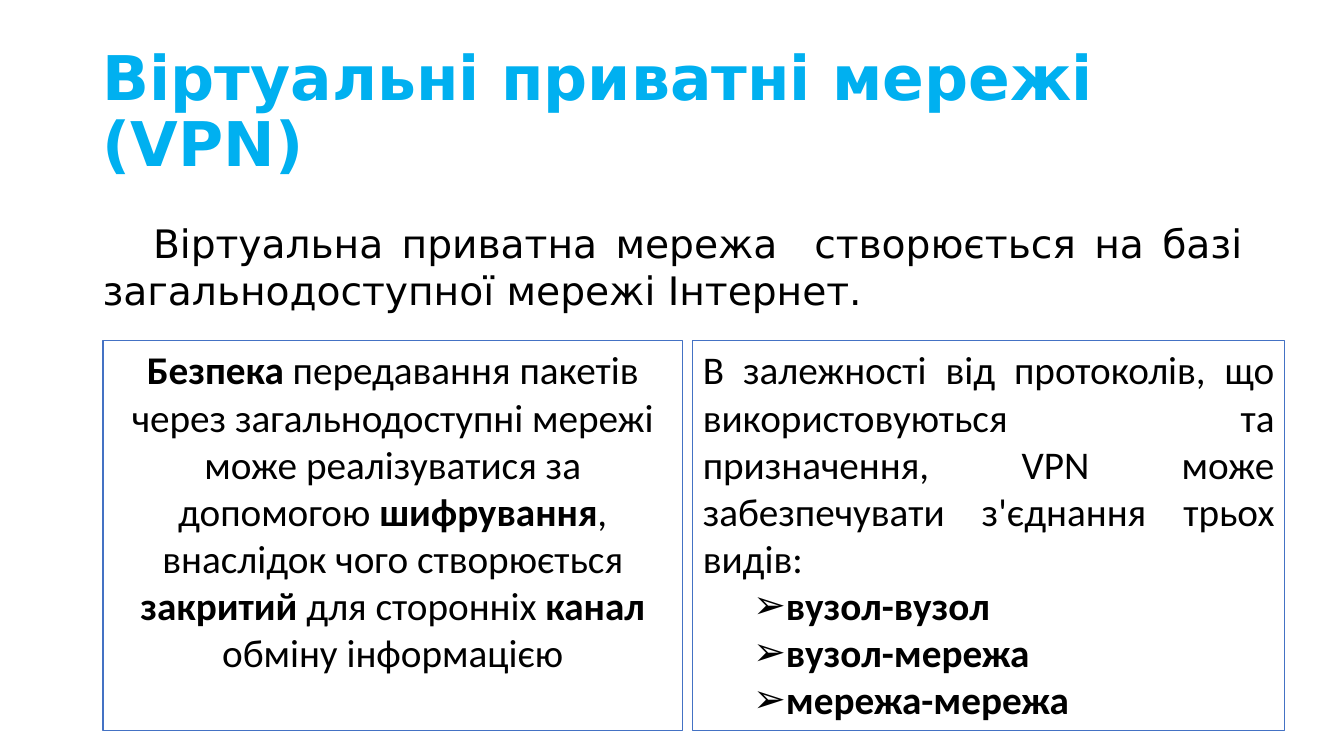
from dataclasses import dataclass, field

from lxml.etree import SubElement
from pptx import Presentation
from pptx.dml.color import RGBColor
from pptx.enum.text import MSO_ANCHOR, MSO_AUTO_SIZE, PP_ALIGN
from pptx.oxml.ns import qn
from pptx.util import Inches, Pt

SLIDE_WIDTH, SLIDE_HEIGHT = Inches(13.33), Inches(7.5)
BLUE, OUTLINE, BLACK, WHITE = "00B0F0", "4472C4", "000000", "FFFFFF"
DISPLAY_FONT, BODY_FONT = "DejaVu Sans", "Calibri"
TWO_CONTENT_LAYOUT = 3


@dataclass
class Area:
    """Place on the slide, in percent of its width and height."""
    left: float
    top: float
    width: float
    height: float


@dataclass
class Para:
    """Text with *bold* parts between asterisks."""
    text: str
    align: PP_ALIGN = PP_ALIGN.LEFT
    level: int = 0
    margin: float = 0
    indent: float = 0
    bullet: str = ""
    spacing: float = 1.0


@dataclass
class Block:
    area: Area
    paras: list[Para]
    font: str = BODY_FONT
    size: int = 28
    color: str = BLACK
    outlined: bool = False
    frame: dict = field(default_factory=dict)


def rgb(value: str) -> RGBColor:
    return RGBColor.from_string(value)


def apply(target, values: dict) -> None:
    for name, value in values.items():
        setattr(target, name, value)


def place(shape, area: Area) -> None:
    apply(shape, {
        "left": int(SLIDE_WIDTH * area.left / 100),
        "top": int(SLIDE_HEIGHT * area.top / 100),
        "width": int(SLIDE_WIDTH * area.width / 100),
        "height": int(SLIDE_HEIGHT * area.height / 100),
    })


def write_para(paragraph, para: Para, block: Block) -> None:
    apply(paragraph, {
        "alignment": para.align, "level": para.level,
        "line_spacing": para.spacing,
        "space_before": Pt(0), "space_after": Pt(0),
    })
    # Indents and bullet
    properties = paragraph._p.get_or_add_pPr()
    properties.set("marL", str(Inches(para.margin)))
    properties.set("indent", str(Inches(para.indent)))
    if para.bullet:
        SubElement(properties, qn("a:buChar"), char=para.bullet)
    else:
        SubElement(properties, qn("a:buNone"))
    # Odd parts lie between asterisks
    for index, part in enumerate(para.text.split("*")):
        if part:
            run = paragraph.add_run()
            run.text = part
            apply(run.font, {"name": block.font, "size": Pt(block.size),
                             "bold": index % 2 == 1})
            run.font.color.rgb = rgb(block.color)


def fill_block(shape, block: Block) -> None:
    place(shape, block.area)
    frame = shape.text_frame
    apply(frame, {"word_wrap": True, "auto_size": MSO_AUTO_SIZE.NONE,
                  "vertical_anchor": MSO_ANCHOR.TOP} | block.frame)
    if block.outlined:
        shape.fill.solid()
        shape.fill.fore_color.rgb = rgb(WHITE)
        shape.line.color.rgb = rgb(OUTLINE)
        shape.line.width = Pt(1)
    for index, para in enumerate(block.paras):
        paragraph = frame.add_paragraph() if index else frame.paragraphs[0]
        write_para(paragraph, para, block)


HEADING = Block(
    Area(6.9, 5.33, 86.27, 19.33),
    [Para("*Віртуальні приватні мережі (VPN)*", spacing=0.9)],
    font=DISPLAY_FONT, size=44, color=BLUE,
    frame={"vertical_anchor": MSO_ANCHOR.MIDDLE},
)
INTRO = Block(
    Area(6.9, 28.4, 86.27, 26.53),
    [Para("Віртуальна приватна мережа  створюється на базі "
          "загальнодоступної мережі Інтернет.",
          PP_ALIGN.JUSTIFY, indent=0.5)],
    font=DISPLAY_FONT,
)
SECURITY = Block(
    Area(7.65, 45.07, 43.14, 51.6),
    [Para("*Безпека *передавання пакетів через загальнодоступні мережі може "
          "реалізуватися за допомогою *шифрування*, внаслідок чого "
          "створюється *закритий* для сторонніх *канал *обміну інформацією",
          PP_ALIGN.CENTER)],
    outlined=True,
)
CONNECTIONS = Block(
    Area(51.54, 45.07, 44.04, 51.6),
    [Para("В залежності від протоколів, що використовуються та призначення, "
          "VPN може забезпечувати з'єднання трьох видів:", PP_ALIGN.JUSTIFY)]
    + [Para(f"*{kind}*", PP_ALIGN.JUSTIFY, level=1, margin=0.81,
            indent=-0.31, bullet="➢")
       for kind in ("вузол-вузол", "вузол-мережа", "мережа-мережа")],
    outlined=True,
)


def main() -> None:
    deck = Presentation()
    apply(deck, {"slide_width": SLIDE_WIDTH, "slide_height": SLIDE_HEIGHT})
    slide = deck.slides.add_slide(deck.slide_layouts[TWO_CONTENT_LAYOUT])

    # Title and the two panels
    heading, security, connections = slide.placeholders
    fill_block(heading, HEADING)
    fill_block(security, SECURITY)
    fill_block(connections, CONNECTIONS)

    # Introduction, kept behind the panels
    intro = slide.shapes.add_textbox(0, 0, 0, 0)
    fill_block(intro, INTRO)
    heading._element.addnext(intro._element)

    deck.save("out.pptx")


if __name__ == "__main__":
    main()
